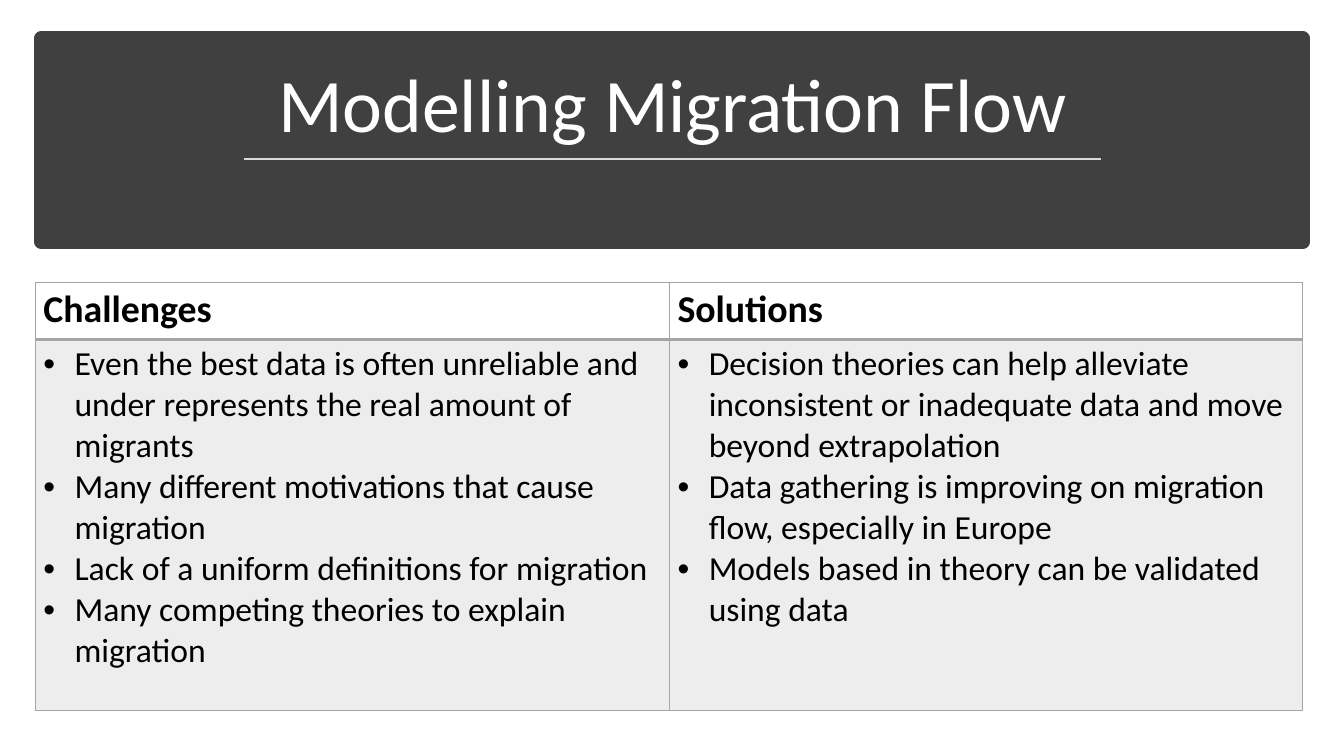
from dataclasses import dataclass

from lxml import etree
from pptx import Presentation
from pptx.dml.color import RGBColor
from pptx.enum.shapes import MSO_CONNECTOR, MSO_SHAPE
from pptx.enum.text import MSO_ANCHOR as ANCHOR, PP_ALIGN as ALIGN
from pptx.oxml.ns import qn
from pptx.util import Pt

EMU_PER_PX = 9144  # 100 px to the inch
FONT = "Calibri"
WHITE = RGBColor(0xFF, 0xFF, 0xFF)
BLACK = RGBColor(0x00, 0x00, 0x00)
CHARCOAL = RGBColor(0x40, 0x40, 0x40)
SILVER = RGBColor(0xD9, 0xD9, 0xD9)
GRAY = RGBColor(0xA5, 0xA5, 0xA5)
BODY_ALPHA = 20
BULLET_INDENT = 31


@dataclass(frozen=True)
class Column:
    heading: str
    width: int
    points: tuple[str, ...]


COLUMNS = (
    Column("Challenges", 629, (
        "Even the best data is often unreliable and under represents the real amount of migrants",
        "Many different motivations that cause migration",
        "Lack of a uniform definitions for migration",
        "Many competing theories to explain migration",
    )),
    Column("Solutions", 628, (
        "Decision theories can help alleviate inconsistent or inadequate data and move beyond extrapolation",
        "Data gathering is improving on migration flow, especially in Europe",
        "Models based in theory can be validated using data",
    )),
)
ROW_HEIGHTS = (57, 368)


def px(n: int) -> int:
    return n * EMU_PER_PX


def box(*lengths: int) -> list[int]:
    return [px(n) for n in lengths]


def set_font(p, size: int, color: RGBColor, bold: bool = False) -> None:
    f = p.font
    f.name, f.size, f.bold = FONT, Pt(size), bold
    f.color.rgb = color


def add_banner(slide) -> None:
    s = slide.shapes.add_shape(MSO_SHAPE.RECTANGLE, *box(41, 38, 1251, 202))
    s.shadow.inherit = False
    s.fill.solid()
    s.fill.fore_color.rgb = CHARCOAL
    s.line.color.rgb = CHARCOAL
    s.line.width = Pt(10)


def add_title(slide, text: str) -> None:
    tf = slide.shapes.add_textbox(*box(58, 51, 1218, 102)).text_frame
    tf.word_wrap = True
    tf.vertical_anchor = ANCHOR.BOTTOM
    p = tf.paragraphs[0]
    p.text = text
    p.alignment = ALIGN.CENTER
    p.line_spacing = 0.9
    set_font(p, 54, WHITE)


def add_underline(slide) -> None:
    c = slide.shapes.add_connector(MSO_CONNECTOR.STRAIGHT, *box(242, 158, 1092, 158))
    c.line.color.rgb = SILVER
    c.line.width = Pt(1.75)
    etree.SubElement(c._element.spPr, qn("a:effectLst"))


def set_borders(cell, top: int = 1, bottom: int = 1) -> None:
    """Draw the four cell edges; widths are in points."""
    tc_pr = cell._tc.get_or_add_tcPr()
    for side, width in (("L", 1), ("R", 1), ("T", top), ("B", bottom)):
        ln = etree.SubElement(tc_pr, qn(f"a:ln{side}"), w=str(Pt(width)))
        fill = etree.SubElement(ln, qn("a:solidFill"))
        etree.SubElement(fill, qn("a:srgbClr"), val=str(GRAY))


def set_margins(cell) -> None:
    cell.margin_left = cell.margin_right = px(8)
    cell.margin_top = cell.margin_bottom = px(4)


def add_bullet(p) -> None:
    p_pr = p._p.get_or_add_pPr()
    p_pr.set("marL", str(px(BULLET_INDENT)))
    p_pr.set("indent", str(-px(BULLET_INDENT)))
    etree.SubElement(p_pr, qn("a:buFont"), typeface="Arial")
    etree.SubElement(p_pr, qn("a:buChar"), char="•")


def fill_heading(cell, text: str) -> None:
    set_margins(cell)
    set_borders(cell, bottom=2)
    cell.fill.background()
    p = cell.text_frame.paragraphs[0]
    p.text = text
    set_font(p, 27, BLACK, bold=True)


def fill_points(cell, points: tuple[str, ...]) -> None:
    set_margins(cell)
    set_borders(cell, top=2)
    cell.fill.solid()
    cell.fill.fore_color.rgb = GRAY
    color = cell._tc.tcPr.find(f"{qn('a:solidFill')}/{qn('a:srgbClr')}")
    etree.SubElement(color, qn("a:alpha"), val=str(BODY_ALPHA * 1000))
    tf = cell.text_frame
    tf.text = "\n".join(points)
    for p in tf.paragraphs:
        add_bullet(p)
        set_font(p, 24, BLACK)


def add_comparison(slide) -> None:
    width = sum(c.width for c in COLUMNS)
    table = slide.shapes.add_table(
        len(ROW_HEIGHTS), len(COLUMNS), *box(35, 280, width, sum(ROW_HEIGHTS))
    ).table
    table.first_row = table.horz_banding = False
    for row, height in zip(table.rows, ROW_HEIGHTS):
        row.height = px(height)
    for i, column in enumerate(COLUMNS):
        table.columns[i].width = px(column.width)
        fill_heading(table.cell(0, i), column.heading)
        fill_points(table.cell(1, i), column.points)


def main() -> None:
    prs = Presentation()
    prs.slide_width, prs.slide_height = box(1333, 750)
    slide = prs.slides.add_slide(prs.slide_layouts[6])
    add_banner(slide)
    add_title(slide, "Modelling Migration Flow")
    add_underline(slide)
    add_comparison(slide)
    prs.save("out.pptx")


if __name__ == "__main__":
    main()
